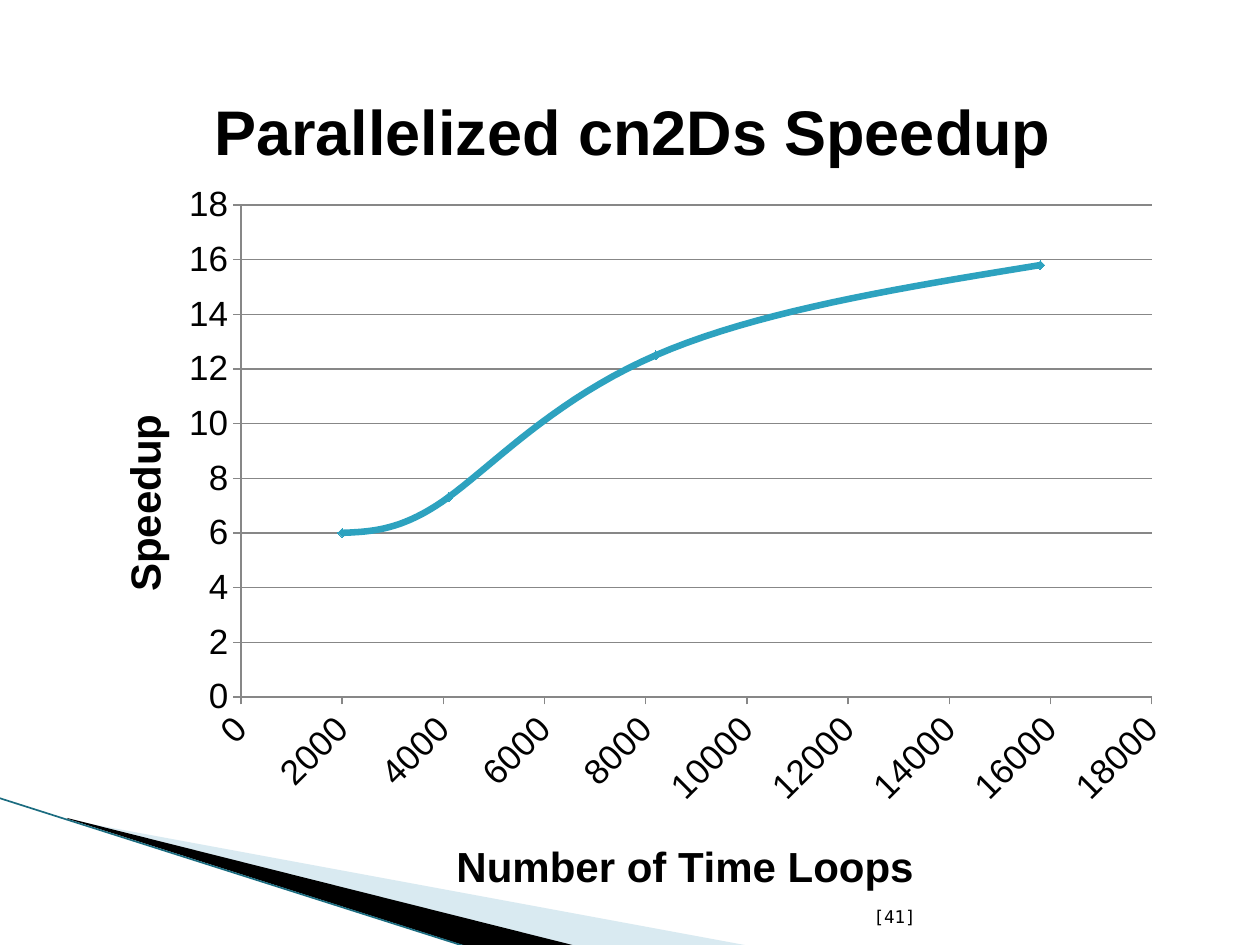
"""Build the speedup chart slide."""
from dataclasses import dataclass

from lxml import etree
from pptx import Presentation, util as u
from pptx.chart.data import XyChartData
from pptx.dml.color import RGBColor
from pptx.enum import chart as ch, shapes, text
from pptx.oxml.ns import qn

PX = 914400 / 126


@dataclass(frozen=True)
class Theme:
    """Colours, fonts and type sizes."""
    ink: str = "000000"
    curve: str = "2DA2BF"
    grid: str = "878787"
    pale: str = "A0CBDC"
    edge: str = "1B6C80"
    sans: str = "Arial"
    mono: str = "DejaVu Sans Mono"
    title: int = 36
    axis_title: int = 24
    tick: int = 20
    small: int = 10


THEME = Theme()
CHART = (72, 37, 1116, 869)
POINTS = [(2000, 6), (4100, 7.3), (8200, 12.5), (15800, 15.8)]


def px(length):
    """Turn pixels into EMU."""
    return u.Emu(round(length * PX))


def rgb(name):
    """Turn a hex string into a colour."""
    return RGBColor.from_string(name)


def style(font, size, face=THEME.sans, bold=False):
    """Set face, size, weight and colour of a font."""
    font.name, font.size, font.bold = face, u.Pt(size), bold
    font.color.rgb = rgb(THEME.ink)


def add_wedge(slide, points, color, alpha=None):
    """Draw a filled polygon without outline."""
    builder = slide.shapes.build_freeform(*points[0], scale=PX)
    builder.add_line_segments(points[1:], close=True)
    wedge = builder.convert_to_shape()
    wedge.shadow.inherit = False
    wedge.fill.solid()
    wedge.fill.fore_color.rgb = rgb(color)
    wedge.line.fill.background()
    if alpha:
        tint = wedge.element.spPr.find(f".//{qn('a:srgbClr')}")
        etree.SubElement(tint, qn("a:alpha"), val=str(alpha * 1000))


def add_edge(slide, start, end):
    """Draw the thin diagonal line."""
    ends = [px(value) for value in (*start, *end)]
    edge = slide.shapes.add_connector(shapes.MSO_CONNECTOR.STRAIGHT, *ends)
    edge.line.color.rgb = rgb(THEME.edge)
    edge.line.width = u.Pt(0.95)
    etree.SubElement(edge.element.spPr, qn("a:effectLst"))


def place(element, index, left, top, width=None, height=None):
    """Give a chart part a fixed place, in slide pixels."""
    layout = element.find(qn("c:layout"))
    if layout is None:
        layout = etree.Element(qn("c:layout"))
        element.insert(index, layout)
    manual = etree.SubElement(layout, qn("c:manualLayout"))
    values = {"xMode": "edge", "yMode": "edge",
              "x": round((left - CHART[0]) / CHART[2], 4),
              "y": round((top - CHART[1]) / CHART[3], 4)}
    if width:
        etree.SubElement(manual, qn("c:layoutTarget"), val="inner")
        values.update(w=round(width / CHART[2], 4), h=round(height / CHART[3], 4))
    for tag, value in values.items():
        etree.SubElement(manual, qn(f"c:{tag}"), val=str(value))


def set_title(title, words, size, left, top):
    """Write and place a chart or axis title."""
    para = title.text_frame.paragraphs[0]
    para.text = words
    style(para.font, size, bold=True)
    place(title.element, 1, left, top)


def format_axis(axis, words, left, top, maximum, step):
    """Set title, scale, ticks and line of an axis."""
    set_title(axis.axis_title, words, THEME.axis_title, left, top)
    axis.minimum_scale, axis.maximum_scale, axis.major_unit = 0, maximum, step
    axis.major_tick_mark = ch.XL_TICK_MARK.OUTSIDE
    axis.minor_tick_mark = ch.XL_TICK_MARK.NONE
    axis.format.line.color.rgb = rgb(THEME.grid)
    axis.tick_labels.number_format = "General"
    axis.tick_labels.number_format_is_linked = False
    style(axis.tick_labels.font, THEME.tick)


def format_series(series):
    """Draw the series as a smooth line with diamonds."""
    series.format.line.color.rgb = rgb(THEME.curve)
    series.format.line.width = u.Pt(3.75)
    series.marker.style = ch.XL_MARKER_STYLE.DIAMOND
    series.marker.size = 5
    series.marker.format.fill.solid()
    series.marker.format.fill.fore_color.rgb = rgb(THEME.curve)
    series.marker.format.line.color.rgb = rgb(THEME.curve)


def add_speedup_chart(slide):
    """Add the scatter chart of speedup against time loops."""
    data = XyChartData()
    points = data.add_series("Series 1")
    for loops, speedup in POINTS:
        points.add_data_point(loops, speedup)
    frame = slide.shapes.add_chart(
        ch.XL_CHART_TYPE.XY_SCATTER_SMOOTH, *map(px, CHART), data)
    chart = frame.chart
    style(chart.font, THEME.small, THEME.mono)
    chart.has_legend = False
    chart.plots[0].vary_by_categories = False
    set_title(chart.chart_title, "Parallelized cn2Ds Speedup", THEME.title, 203, 80)
    format_axis(chart.category_axis, "Number of Time Loops", 449, 832, 18000, 2000)
    format_axis(chart.value_axis, "Speedup", 110, 407, 18, 2)
    chart.category_axis.has_major_gridlines = False
    chart.value_axis.has_major_gridlines = True
    chart.value_axis.major_gridlines.format.line.color.rgb = rgb(THEME.grid)
    format_series(chart.plots[0].series[0])
    root = chart.element
    root.find(f".//{qn('c:ser')}/{qn('c:smooth')}").set("val", "1")
    labels = root.find(f".//{qn('c:valAx')}/{qn('c:txPr')}/{qn('a:bodyPr')}")
    labels.set("rot", "-2700000")
    labels.set("vert", "horz")
    place(root.find(f".//{qn('c:plotArea')}"), 0, 241, 205, 911, 492)


def add_page_number(slide, words):
    """Add the page number at the foot."""
    box = slide.shapes.add_textbox(px(604), px(883), px(324), px(50))
    frame = box.text_frame
    frame.word_wrap = True
    frame.vertical_anchor = text.MSO_ANCHOR.BOTTOM
    para = frame.paragraphs[0]
    para.text = words
    para.alignment = text.PP_ALIGN.RIGHT
    style(para.font, THEME.small, THEME.mono)


def main():
    """Build and save the deck."""
    deck = Presentation()
    deck.slide_width, deck.slide_height = px(1260), px(945)
    page = deck.slides.add_slide(deck.slide_layouts[6])
    add_wedge(page, [(69, 820), (750, 946), (575, 946), (69, 819)], THEME.pale, 40)
    add_wedge(page, [(67, 818), (576, 946), (469, 947), (68, 819)], THEME.ink)
    add_edge(page, (-1, 798), (467, 947))
    add_speedup_chart(page)
    add_page_number(page, "[41]")
    deck.save("out.pptx")


if __name__ == "__main__":
    main()
